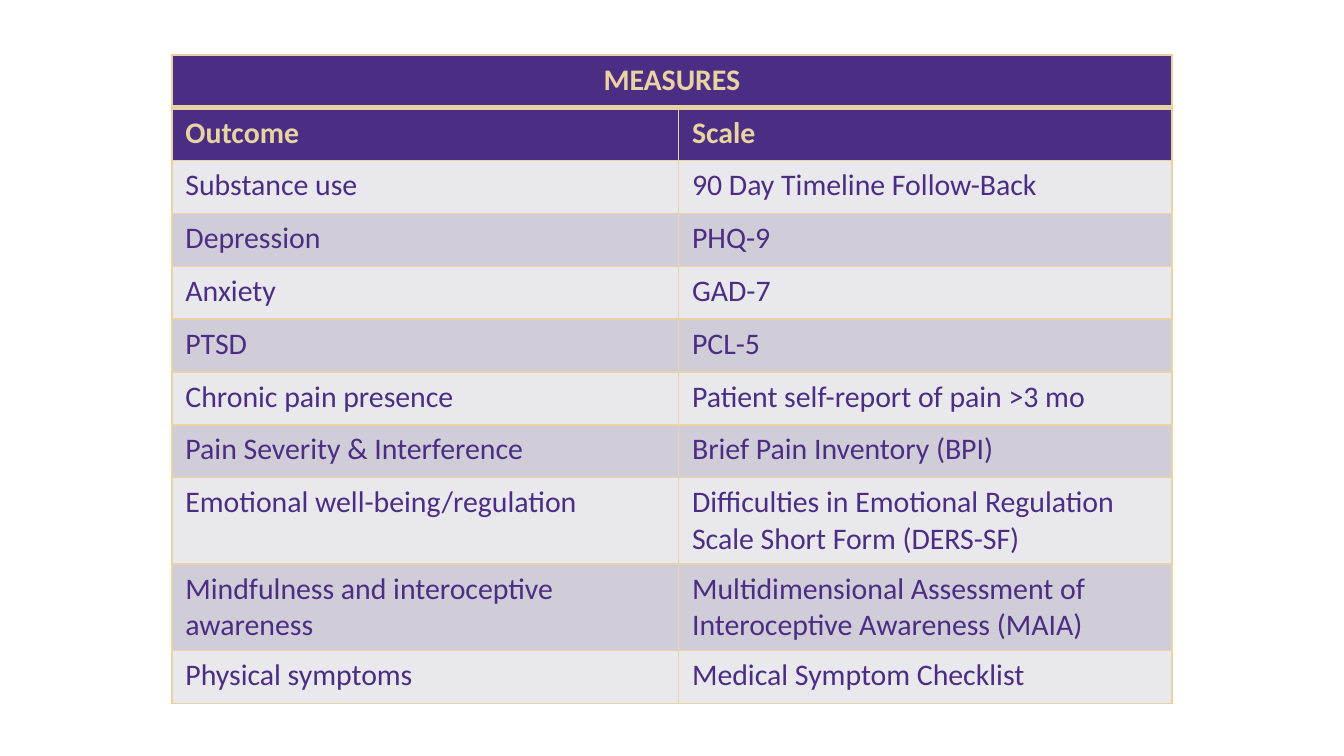
"""Build a slide with a table of outcome measures and their scales."""
import pptx
import pptx.dml.color
import pptx.enum.text
import pptx.oxml.ns
import pptx.util
import lxml.etree

Inches = pptx.util.Inches
Pt = pptx.util.Pt
RGBColor = pptx.dml.color.RGBColor

PURPLE = RGBColor(0x4B, 0x2E, 0x83)
GOLD = RGBColor(0xE8, 0xD3, 0xA2)
LIGHT = RGBColor(0xE9, 0xE8, 0xED)
DARK = RGBColor(0xD0, 0xCD, 0xD9)

TITLE = "MEASURES"
HEADS = ("Outcome", "Scale")
ROWS = (
    ("Substance use", "90 Day Timeline Follow-Back"),
    ("Depression", "PHQ-9"),
    ("Anxiety", "GAD-7"),
    ("PTSD", "PCL-5"),
    ("Chronic pain presence", "Patient self-report of pain >3 mo"),
    ("Pain Severity & Interference", "Brief Pain Inventory (BPI)"),
    ("Emotional well-being/regulation",
     "Difficulties in Emotional Regulation Scale Short Form (DERS-SF)"),
    ("Mindfulness and interoceptive awareness",
     "Multidimensional Assessment of Interoceptive Awareness (MAIA)"),
    ("Physical symptoms", "Medical Symptom Checklist"),
)
WIDTHS = (3.77, 3.67)
HEIGHT = 28.3 / 72


def add_edge(cell, side, width):
    """Draw one gold border on a cell."""
    name = pptx.oxml.ns.qn
    props = cell._tc.get_or_add_tcPr()
    line = lxml.etree.SubElement(props, name(f"a:ln{side}"), w=str(Pt(width)))
    fill = lxml.etree.SubElement(line, name("a:solidFill"))
    lxml.etree.SubElement(fill, name("a:srgbClr"), val=str(GOLD))


def style_cell(cell, fill, top=1, bottom=1):
    """Give a cell its borders and fill."""
    for side, width in (("L", 1), ("R", 1), ("T", top), ("B", bottom)):
        add_edge(cell, side, width)
    cell.fill.solid()
    cell.fill.fore_color.rgb = fill


def add_text(cell, text, color, bold=False):
    """Write a run of text in a cell and return its paragraph."""
    para = cell.text_frame.paragraphs[0]
    run = para.add_run()
    run.text = text
    run.font.name = "Calibri"
    run.font.size = Pt(16)
    run.font.bold = bold
    run.font.color.rgb = color
    return para


def add_title(table):
    """Fill the merged title row."""
    first, last = table.cell(0, 0), table.cell(0, 1)
    first.merge(last)
    for cell in (first, last):
        style_cell(cell, PURPLE, bottom=3)
    para = add_text(first, TITLE, GOLD, True)
    para.alignment = pptx.enum.text.PP_ALIGN.CENTER


def add_heads(table):
    """Fill the row of column heads."""
    for col, text in enumerate(HEADS):
        cell = table.cell(1, col)
        style_cell(cell, PURPLE, top=3)
        add_text(cell, text, GOLD, True)


def add_rows(table):
    """Fill the banded body rows."""
    for num, row in enumerate(ROWS):
        for col, text in enumerate(row):
            cell = table.cell(num + 2, col)
            style_cell(cell, DARK if num % 2 else LIGHT)
            add_text(cell, text, PURPLE)


def add_grid(slide):
    """Add the empty table with its column and row sizes."""
    count = len(ROWS) + 2
    frame = slide.shapes.add_table(
        count, len(WIDTHS), Inches(1.28), Inches(0.41),
        Inches(sum(WIDTHS)), Inches(count * HEIGHT))
    table = frame.table
    for col, width in zip(table.columns, WIDTHS):
        col.width = Inches(width)
    for row in table.rows:
        row.height = Inches(HEIGHT)
    return table


def main():
    """Build and save the slide."""
    deck = pptx.Presentation()
    deck.slide_width, deck.slide_height = Inches(10), Inches(10 * 9 / 16)
    slide = deck.slides.add_slide(deck.slide_layouts[6])
    table = add_grid(slide)
    add_title(table)
    add_heads(table)
    add_rows(table)
    deck.save("out.pptx")


if __name__ == "__main__":
    main()
